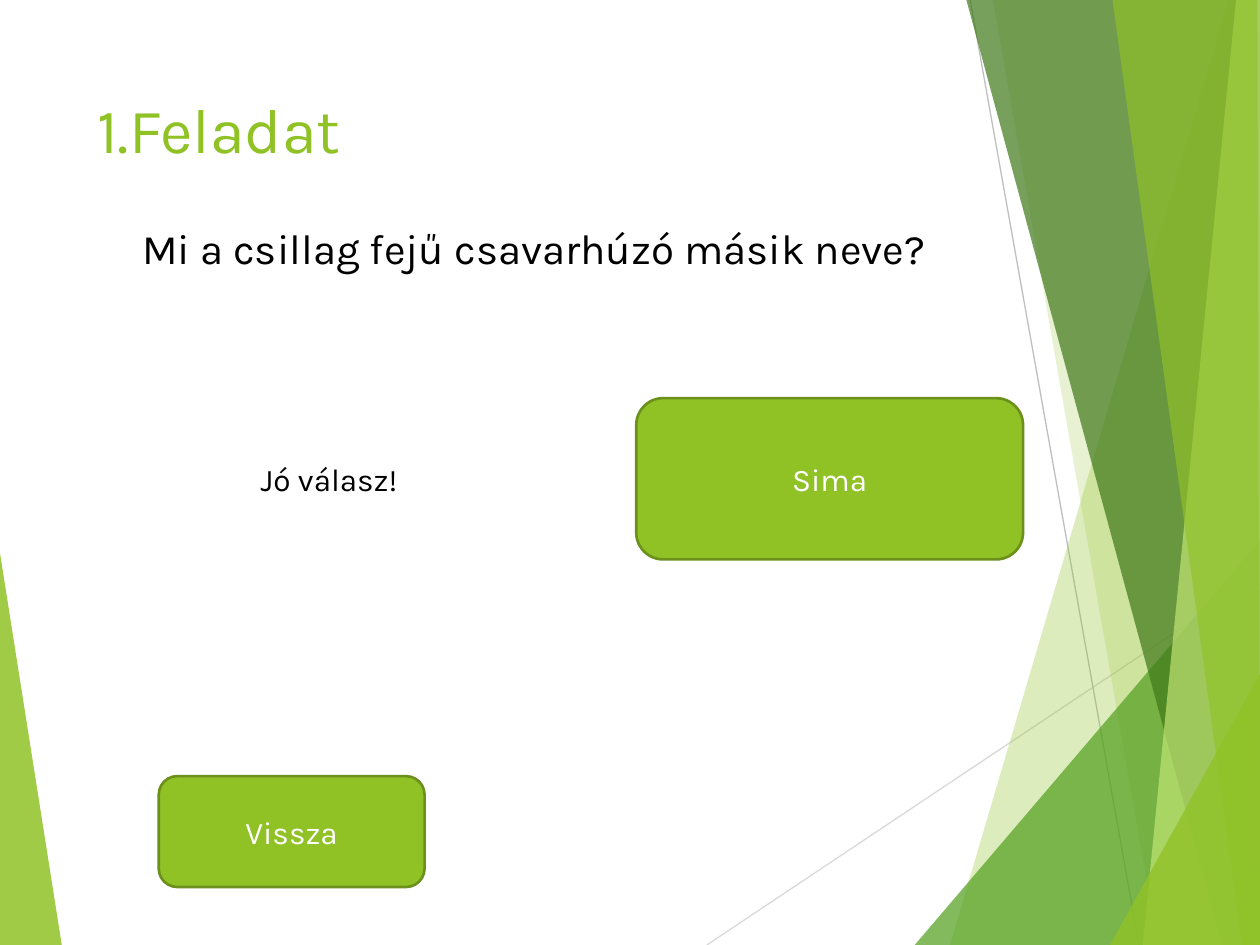
from dataclasses import dataclass

import pptx
import pptx.dml.color
import pptx.enum.shapes
import pptx.enum.text
import pptx.oxml.ns
import pptx.util
from lxml import etree

COLUMNS, ROWS = 100, 75
CELL = pptx.util.Inches(0.1)
FONT = "Karla"
COLOURS = {
    "lime": "90C226",
    "olive": "6B901C",
    "green": "54A021",
    "forest": "3F7819",
    "pale": "C0E474",
    "light grey": "D9D9D9",
    "grey": "BFBFBF",
    "black": "000000",
    "white": "FFFFFF",
}


@dataclass
class Facet:
    points: list[tuple[float, float]]
    colour: str
    opacity: int


@dataclass
class Ray:
    start: tuple[float, float]
    end: tuple[float, float]
    colour: str


@dataclass
class Label:
    text: str
    left: float
    top: float
    width: float
    height: float
    size: int = 18


LEFT_FACET = Facet([(0, 43.9), (4.9, ROWS), (0, ROWS)], "lime", 85)
RAYS = [
    Ray((56.1, ROWS), (COLUMNS, 45.7), "light grey"),
    Ray((77, 0), (90.4, ROWS), "grey"),
]
RIGHT_FACETS = [
    Facet([(97.5, 0), (75.4, ROWS), (COLUMNS, ROWS), (COLUMNS, 0)], "lime", 30),
    Facet([(78.8, 0), (91.9, ROWS), (COLUMNS, ROWS), (COLUMNS, 0)], "lime", 20),
    Facet([(72.6, ROWS), (COLUMNS, 42.9), (COLUMNS, ROWS)], "green", 72),
    Facet([(76.7, 0), (97, ROWS), (COLUMNS, ROWS), (COLUMNS, 0)], "forest", 70),
    Facet([(98.1, 0), (90.7, ROWS), (COLUMNS, ROWS), (COLUMNS, 0)], "pale", 70),
    Facet([(88.3, 0), (98.6, ROWS), (COLUMNS, ROWS), (99.8, 0)], "lime", 65),
    Facet([(88.1, ROWS), (COLUMNS, 53.5), (COLUMNS, ROWS)], "lime", 80),
]
TITLE = Label("1.Feladat", 6.7, 6.7, 69.4, 14.4, 36)
NOTES = [
    Label("Mi a csillag fejű csavarhúzó másik neve?", 10.3, 17.2, 64.9, 5, 24),
    Label("Jó válasz!", 19.7, 36, 14, 4),
]
BUTTONS = [
    Label("Sima", 50.5, 31.6, 30.7, 12.8),
    Label("Vissza", 12.6, 61.6, 21.1, 8.8),
]


def cells(*counts: float) -> list[int]:
    return [round(count * CELL) for count in counts]


def rgb(name: str) -> pptx.dml.color.RGBColor:
    return pptx.dml.color.RGBColor.from_string(COLOURS[name])


def frame(label: Label) -> list[int]:
    return cells(label.left, label.top, label.width, label.height)


def draw_facet(page, facet: Facet) -> None:
    start, *rest = [cells(*point) for point in facet.points]
    builder = page.shapes.build_freeform(*start)
    builder.add_line_segments(rest, close=True)
    shape = builder.convert_to_shape()
    shape.shadow.inherit = False
    shape.line.fill.background()
    shape.fill.solid()
    shape.fill.fore_color.rgb = rgb(facet.colour)
    colour = shape.fill._xPr.find(".//" + pptx.oxml.ns.qn("a:srgbClr"))
    alpha = etree.SubElement(colour, pptx.oxml.ns.qn("a:alpha"))
    alpha.set("val", str(facet.opacity * 1000))


def draw_ray(page, ray: Ray) -> None:
    line = page.shapes.add_connector(
        pptx.enum.shapes.MSO_CONNECTOR.STRAIGHT, *cells(*ray.start, *ray.end))
    line.line.color.rgb = rgb(ray.colour)
    line.line.width = pptx.util.Pt(0.75)
    etree.SubElement(line._element.spPr, pptx.oxml.ns.qn("a:effectLst"))


def write(shape, label: Label, colour: str, align: str, anchor: str, wrap: bool) -> None:
    text_frame = shape.text_frame
    text_frame.text = label.text
    text_frame.word_wrap = wrap
    text_frame.auto_size = pptx.enum.text.MSO_AUTO_SIZE.NONE
    text_frame.vertical_anchor = pptx.enum.text.MSO_ANCHOR[anchor]
    para = text_frame.paragraphs[0]
    para.alignment = pptx.enum.text.PP_ALIGN[align]
    para.font.name = FONT
    para.font.size = pptx.util.Pt(label.size)
    para.font.color.rgb = rgb(colour)


def draw_title(page, label: Label) -> None:
    title = page.shapes.title
    title.left, title.top, title.width, title.height = frame(label)
    write(title, label, "lime", "LEFT", "TOP", True)


def draw_note(page, label: Label) -> None:
    box = page.shapes.add_textbox(*frame(label))
    write(box, label, "black", "LEFT", "TOP", False)
    box.text_frame.auto_size = pptx.enum.text.MSO_AUTO_SIZE.SHAPE_TO_FIT_TEXT


def draw_button(page, label: Label) -> None:
    button = page.shapes.add_shape(
        pptx.enum.shapes.MSO_SHAPE.ROUNDED_RECTANGLE, *frame(label))
    button.shadow.inherit = False
    button.fill.solid()
    button.fill.fore_color.rgb = rgb("lime")
    button.line.color.rgb = rgb("olive")
    button.line.width = pptx.util.Pt(1.5)
    write(button, label, "white", "CENTER", "MIDDLE", True)


def main() -> None:
    deck = pptx.Presentation()
    deck.slide_width, deck.slide_height = cells(COLUMNS, ROWS)
    page = deck.slides.add_slide(deck.slide_layouts.get_by_name("Title Only"))
    draw_facet(page, LEFT_FACET)
    for ray in RAYS:
        draw_ray(page, ray)
    for facet in RIGHT_FACETS:
        draw_facet(page, facet)
    draw_title(page, TITLE)
    for note in NOTES:
        draw_note(page, note)
    for button in BUTTONS:
        draw_button(page, button)
    deck.save("out.pptx")


if __name__ == "__main__":
    main()
